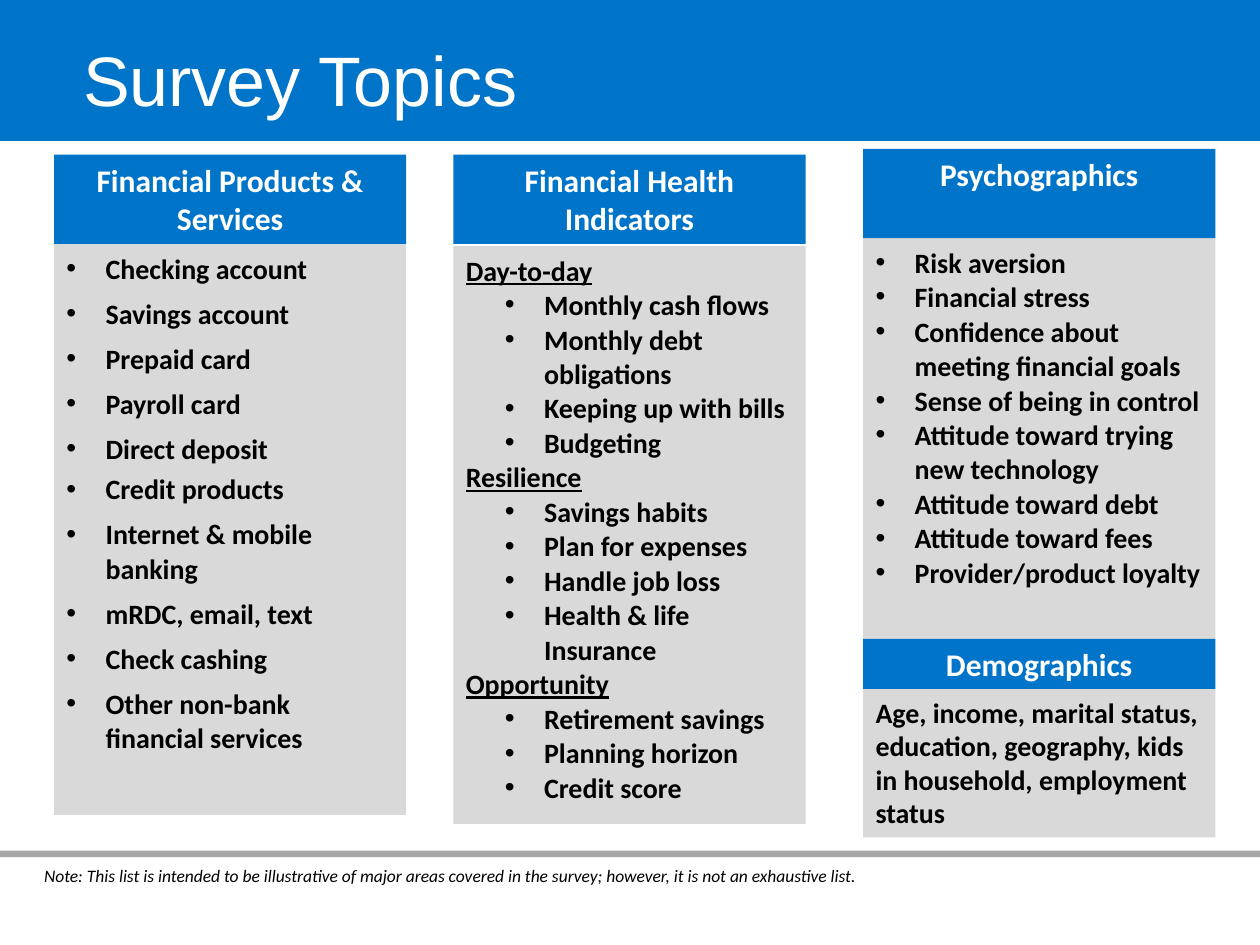
from lxml import etree
from pptx import Presentation
from pptx.dml.color import RGBColor
from pptx.enum.shapes import MSO_SHAPE
from pptx.enum.text import MSO_ANCHOR, PP_ALIGN
from pptx.oxml.ns import qn
from pptx.util import Cm, Pt

RECTANGLE = MSO_SHAPE.RECTANGLE
TOP, MIDDLE = MSO_ANCHOR.TOP, MSO_ANCHOR.MIDDLE
LEFT, CENTER = PP_ALIGN.LEFT, PP_ALIGN.CENTER

BLUE, LIGHT_GRAY, RULE_GRAY = "0074C8", "D9D9D9", "A6A6A6"
WHITE, BLACK = "FFFFFF", "000000"
LINE = Pt(19.7)
BULLET_HANG = Cm(0.79)

TITLE = {"name": "Arial", "size": Pt(40), "color": WHITE}
HEADING = {"name": "Calibri", "size": Pt(18), "bold": True, "color": WHITE}
BODY = {"name": "Calibri", "size": Pt(16), "bold": True, "color": BLACK}
GROUP = BODY | {"underline": True}
NOTE = {"name": "Calibri", "size": Pt(10), "italic": True, "color": BLACK}


def add_rectangle(left, top, width, height, fill):
    shape = slide.shapes.add_shape(RECTANGLE, Cm(left), Cm(top), Cm(width), Cm(height))
    shape.shadow.inherit = False
    shape.fill.solid()
    shape.fill.fore_color.rgb = RGBColor.from_string(fill)
    shape.line.fill.background()
    shape.text_frame.word_wrap = True
    shape.text_frame.vertical_anchor = TOP
    return shape


def write(frame, texts, font_format, alignment=LEFT, bullet_left=None, **spacing):
    """Add one paragraph per text, filling the empty first paragraph if there is one."""
    for text in texts:
        first = not frame.text
        paragraph = frame.paragraphs[0] if first else frame.add_paragraph()
        paragraph.text = text
        paragraph.alignment = alignment
        for name, value in spacing.items():
            setattr(paragraph, name, value)
        if first:
            paragraph.space_before = Pt(0)
        if bullet_left is not None:
            properties = paragraph._p.get_or_add_pPr()
            properties.set("marL", str(bullet_left))
            properties.set("indent", str(-BULLET_HANG))
            etree.SubElement(properties, qn("a:buFont")).set("typeface", "Arial")
            etree.SubElement(properties, qn("a:buChar")).set("char", "•")
        for name, value in font_format.items():
            if name == "color":
                paragraph.font.color.rgb = RGBColor.from_string(value)
            else:
                setattr(paragraph.font, name, value)


presentation = Presentation()
presentation.slide_width, presentation.slide_height = Cm(25.4), Cm(19.05)
slide = presentation.slides.add_slide(presentation.slide_layouts[5])

# Title band and footer rule
band = add_rectangle(0, 0, 25.4, 2.84, BLUE)
add_rectangle(0, 17.15, 25.4, 0.13, RULE_GRAY)

title = slide.shapes.title
band.element.addnext(title.element)
title.left, title.top, title.width, title.height = Cm(1.42), Cm(0), Cm(22.86), Cm(3.18)
title.text_frame.vertical_anchor = MIDDLE
write(title.text_frame, ["Survey Topics"], TITLE)

# Panels: left, top, heading height, body top, body height, heading lines
COLUMN_WIDTH = 7.1
panels = [
    (1.09, 3.12, 1.8, 4.92, 11.51, ["Financial Products &", "Services"]),
    (9.14, 3.12, 1.8, 4.96, 11.65, ["Financial Health Indicators"]),
    (17.4, 3.0, 1.8, 4.8, 8.1, ["Psychographics"]),
    (17.4, 12.88, 1.01, 13.89, 2.99, ["Demographics"]),
]
bodies = []
for left, top, heading_height, body_top, body_height, heading in panels:
    body = add_rectangle(left, body_top, COLUMN_WIDTH, body_height, LIGHT_GRAY)
    bodies.append(body.text_frame)
    header = add_rectangle(left, top, COLUMN_WIDTH, heading_height, BLUE)
    write(header.text_frame, heading, HEADING, CENTER)
products, health, psychographics, demographics = bodies

product_names = [
    "Checking account", "Savings account", "Prepaid card", "Payroll card",
    "Direct deposit", "Credit products", "Internet & mobile banking",
    "mRDC, email, text", "Check cashing", "Other non-bank financial services",
]
for product in product_names:
    spacing = 0.9 if product == "Credit products" else LINE
    write(products, [product], BODY, bullet_left=BULLET_HANG, line_spacing=spacing,
          space_before=Pt(3), space_after=Pt(3))

indicators = {
    "Day-to-day": ["Monthly cash flows", "Monthly debt obligations",
                   "Keeping up with bills", "Budgeting"],
    "Resilience": ["Savings habits", "Plan for expenses", "Handle job loss",
                   "Health & life Insurance"],
    "Opportunity": ["Retirement savings", "Planning horizon", "Credit score"],
}
for group, items in indicators.items():
    write(health, [group], GROUP, line_spacing=LINE)
    write(health, items, BODY, bullet_left=2 * BULLET_HANG, line_spacing=LINE, level=1)

attitudes = [
    "Risk aversion", "Financial stress", "Confidence about meeting financial goals",
    "Sense of being in control", "Attitude toward trying new technology",
    "Attitude toward debt", "Attitude toward fees", "Provider/product loyalty",
]
write(psychographics, attitudes, BODY, bullet_left=BULLET_HANG, line_spacing=LINE)

write(demographics, ["Age, income, marital status, education, geography, "
                     "kids in household, employment status"], BODY)

# Footnote
note = slide.shapes.add_textbox(Cm(0.64), Cm(17.32), Cm(24.23), Cm(0.69))
note.text_frame.word_wrap = True
write(note.text_frame, ["Note: This list is intended to be illustrative of major areas covered "
                        "in the survey; however, it is not an exhaustive list."], NOTE)

presentation.save("out.pptx")
